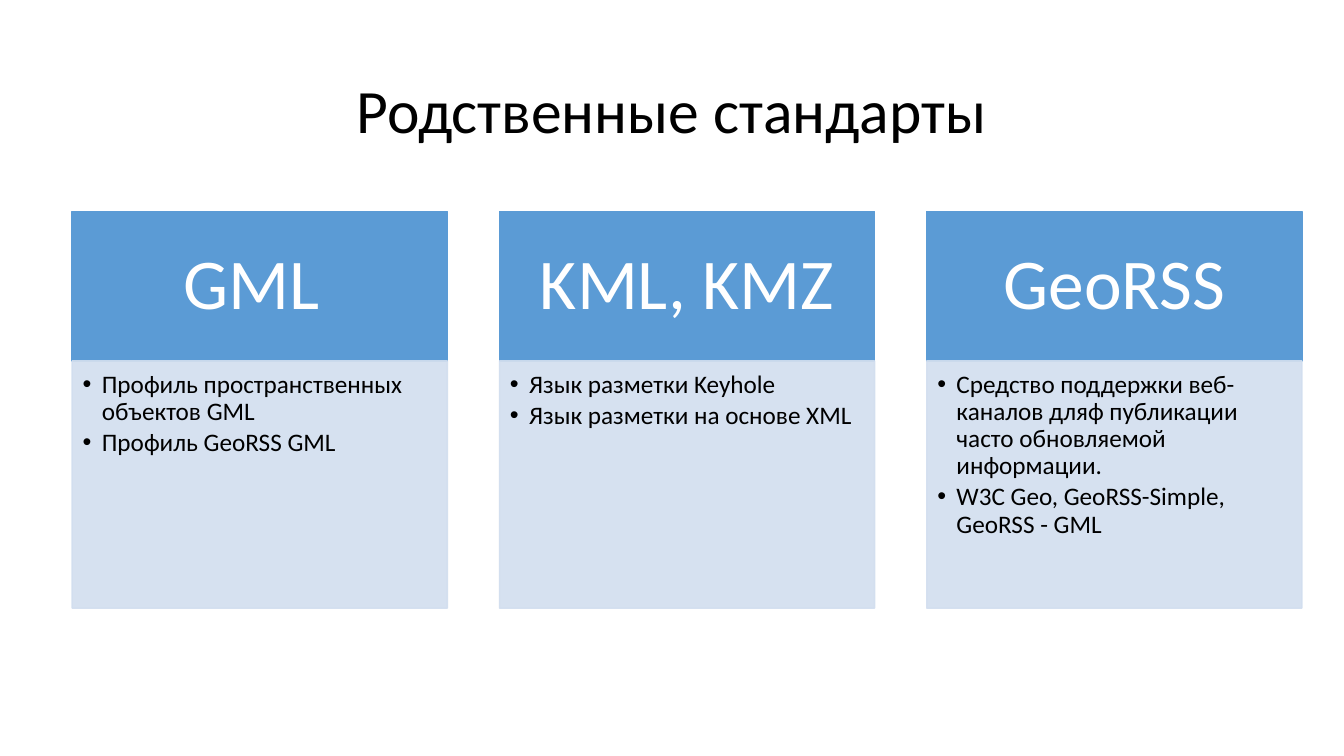
from lxml import etree
from pptx import Presentation
from pptx.dml.color import RGBColor
from pptx.enum.shapes import MSO_SHAPE
from pptx.enum.text import MSO_ANCHOR, PP_ALIGN
from pptx.oxml.ns import qn
from pptx.util import Pt

RECTANGLE = MSO_SHAPE.RECTANGLE
TOP, MIDDLE = MSO_ANCHOR.TOP, MSO_ANCHOR.MIDDLE
LEFT, CENTER = PP_ALIGN.LEFT, PP_ALIGN.CENTER
TITLE_ONLY = 5
FONT = "Calibri"
BLACK, WHITE, BLUE, PALE_BLUE = "000000", "FFFFFF", "5B9BD5", "D2DEEF"

STANDARDS = [
    ("GML ", ["Профиль пространственных объектов GML", "Профиль GeoRSS GML"]),
    ("KML, KMZ", ["Язык разметки Keyhole", "Язык разметки на основе XML"]),
    ("GeoRSS", [
        "Средство поддержки веб-каналов дляф публикации часто обновляемой информации.",
        "W3C Geo, GeoRSS-Simple, GeoRSS - GML",
    ]),
]


def color(hex_value):
    return RGBColor.from_string(hex_value)


def place(part, left, top, width, height):
    part.left, part.top = Pt(left), Pt(top)
    part.width, part.height = Pt(width), Pt(height)


def write(frame, lines, size, hex_value, align, anchor, insets, space_after=0):
    frame.text = "\n".join(lines)
    frame.word_wrap = True
    frame.vertical_anchor = anchor
    frame.margin_left, frame.margin_top, frame.margin_right, frame.margin_bottom = map(Pt, insets)
    for paragraph in frame.paragraphs:
        paragraph.alignment = align
        paragraph.line_spacing = 0.9
        paragraph.space_before = Pt(0)
        paragraph.space_after = Pt(space_after)
        for run in paragraph.runs:
            run.font.name = FONT
            run.font.size = Pt(size)
            run.font.color.rgb = color(hex_value)


def add_bullets(frame, indent):
    for paragraph in frame.paragraphs:
        properties = paragraph._p.get_or_add_pPr()
        properties.set("marL", str(Pt(indent)))
        properties.set("indent", str(-Pt(indent)))
        etree.SubElement(properties, qn("a:buFont"), typeface="Arial")
        etree.SubElement(properties, qn("a:buChar"), char="•")


def add_panel(slide, box, hex_value, opacity=100):
    panel = slide.shapes.add_shape(RECTANGLE, *map(Pt, box))
    panel.shadow.inherit = False
    panel.fill.solid()
    panel.fill.fore_color.rgb = color(hex_value)
    panel.line.color.rgb = color(hex_value)
    panel.line.width = Pt(1)
    if opacity < 100:
        for paint in panel._element.spPr.iter(qn("a:srgbClr")):
            etree.SubElement(paint, qn("a:alpha"), val=str(opacity * 1000))
    return panel.text_frame


def add_title(slide, box, wording):
    title = slide.shapes.title
    place(title, *box)
    write(title.text_frame, [wording], 44, BLACK, CENTER, MIDDLE, (7.2, 3.6, 7.2, 3.6))


def add_standard(slide, box, name, features):
    left, top, width, height = box
    header_height = 106.8
    header = add_panel(slide, (left, top, width, header_height), BLUE)
    write(header, [name], 51, WHITE, CENTER, MIDDLE, (27, 16.5, 27, 16.5))
    details_box = (left, top + header_height, width, height - header_height)
    details = add_panel(slide, details_box, PALE_BLUE, opacity=90)
    write(details, features, 18, BLACK, LEFT, TOP, (7.5, 7.5, 10, 11.5), 2.7)
    add_bullets(details, 13.7)


def add_standards(slide, box, gap):
    left, top, width, height = box
    column_width = (width - gap * (len(STANDARDS) - 1)) / len(STANDARDS)
    for index, (name, features) in enumerate(STANDARDS):
        column_left = left + index * (column_width + gap)
        add_standard(slide, (column_left, top, column_width, height), name, features)


def main():
    presentation = Presentation()
    presentation.slide_width, presentation.slide_height = Pt(960), Pt(540)
    slide = presentation.slides.add_slide(presentation.slide_layouts[TITLE_ONLY])
    add_title(slide, (66, 28.8, 828, 104.4), "Родственные стандарты")
    add_standards(slide, (51.6, 151, 878.4, 283.4), gap=37.2)
    presentation.save("out.pptx")


if __name__ == "__main__":
    main()
